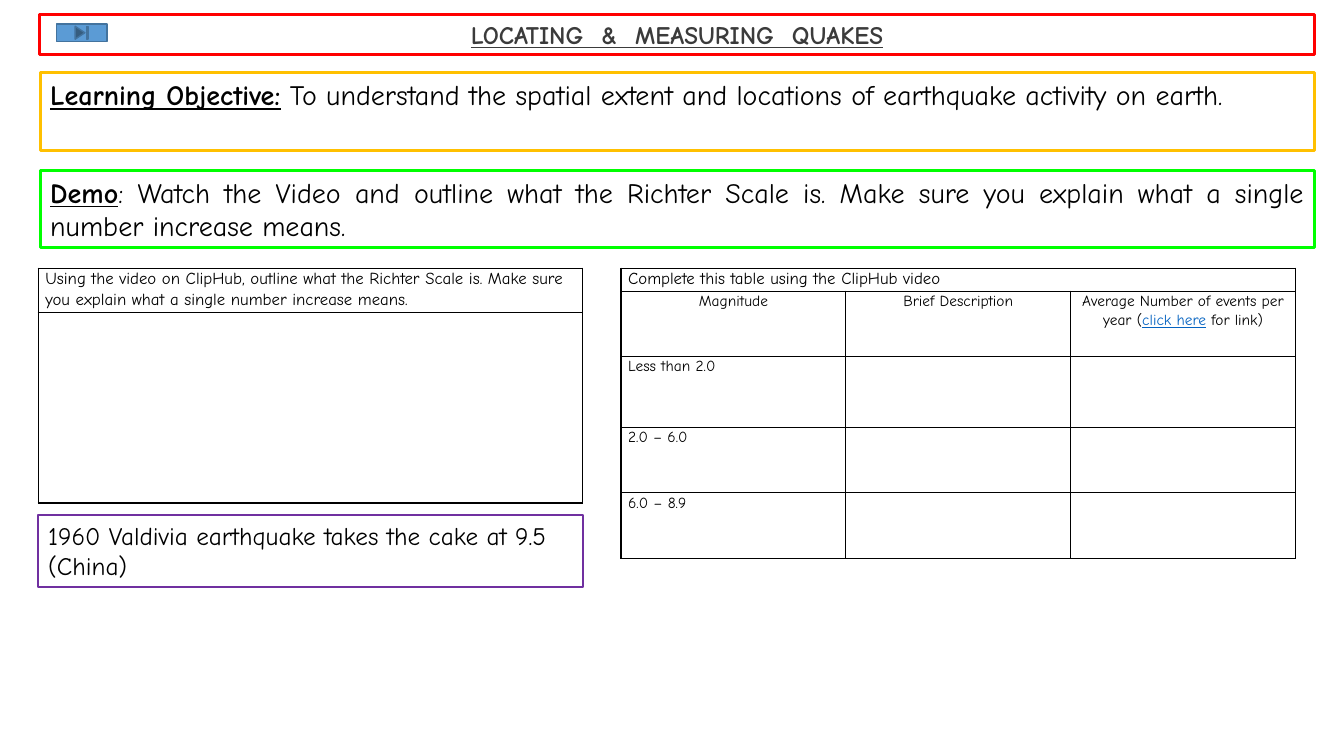
import pptx
import pptx.dml.color
import pptx.enum.shapes
import pptx.enum.text
import pptx.oxml
import pptx.oxml.ns
import pptx.util

Inches = pptx.util.Inches
Pt = pptx.util.Pt
RGBColor = pptx.dml.color.RGBColor
ALIGN = pptx.enum.text.PP_ALIGN

FONT = "Comic Neue"
BLACK = RGBColor(0x00, 0x00, 0x00)
CHARCOAL = RGBColor(0x3B, 0x3B, 0x3B)
RED = RGBColor(0xFF, 0x00, 0x00)
AMBER = RGBColor(0xFF, 0xC0, 0x00)
GREEN = RGBColor(0x00, 0xFF, 0x00)
PURPLE = RGBColor(0x70, 0x30, 0xA0)
BLUE = RGBColor(0x5B, 0x9B, 0xD5)
DARK_BLUE = RGBColor(0x43, 0x73, 0x9E)
LINK_BLUE = RGBColor(0x05, 0x63, 0xC1)

TASK = "outline what the Richter Scale is. Make sure you explain what a single number increase means."


def add_run(p, text, size, color=BLACK, bold=False, underline=False):
    r = p.add_run()
    r.text = text
    r.font.name = FONT
    r.font.size = Pt(size)
    r.font.color.rgb = color
    r.font.bold = bold
    r.font.underline = underline


def add_box(s, x, y, w, h, line, size, body="", heading="", align=ALIGN.LEFT,
            heading_color=BLACK, width=2.25):
    sp = s.shapes.add_textbox(Inches(x), Inches(y), Inches(w), Inches(h))
    sp.line.color.rgb = line
    sp.line.width = Pt(width)
    tf = sp.text_frame
    tf.word_wrap = True
    p = tf.paragraphs[0]
    p.alignment = align
    if heading:
        add_run(p, heading, size, heading_color, bold=True, underline=True)
    if body:
        add_run(p, body, size)


def add_end_button(s, x, y, w, h):
    sp = s.shapes.add_shape(pptx.enum.shapes.MSO_SHAPE.ACTION_BUTTON_END,
                            Inches(x), Inches(y), Inches(w), Inches(h))
    sp.shadow.inherit = False
    sp.fill.solid()
    sp.fill.fore_color.rgb = BLUE
    sp.line.color.rgb = DARK_BLUE
    sp.line.width = Pt(1)


def style_cell(cell):
    cell.margin_left = cell.margin_right = Inches(0.07)
    cell.margin_top = cell.margin_bottom = 0
    p = cell.text_frame.paragraphs[0]
    p.line_spacing = 1.07
    p._p.get_or_add_endParaRPr().set("sz", "1100")
    tcPr = cell._tc.get_or_add_tcPr()
    for side in ("lnL", "lnR", "lnT", "lnB"):
        tcPr.append(pptx.oxml.parse_xml(
            f'<a:{side} {pptx.oxml.ns.nsdecls("a")} w="{Pt(1)}"><a:solidFill>'
            f'<a:srgbClr val="{BLACK}"/></a:solidFill></a:{side}>'))
    cell.fill.background()


def add_grid(s, x, y, col_width, cols, heights):
    table = s.shapes.add_table(len(heights), cols, Inches(x), Inches(y),
                               Inches(col_width * cols), Inches(sum(heights))).table
    table.first_row = False
    table.horz_banding = False
    for col in table.columns:
        col.width = Inches(col_width)
    for row, height in zip(table.rows, heights):
        row.height = Inches(height)
        for cell in row.cells:
            style_cell(cell)
    return table


def fill_cell(table, row, col, text, size=11, align=ALIGN.LEFT):
    p = table.cell(row, col).text_frame.paragraphs[0]
    p.alignment = align
    add_run(p, text, size)
    return p


def add_answer_table(s):
    table = add_grid(s, 0.38, 2.66, 5.4, 1, [0.44, 1.89])
    fill_cell(table, 0, 0, f"Using the video on ClipHub, {TASK}", 12)


def add_magnitude_table(s):
    table = add_grid(s, 6.16, 2.66, 2.23, 3, [0.23, 0.65, 0.7, 0.65, 0.65])
    table.cell(0, 0).merge(table.cell(0, 2))
    fill_cell(table, 0, 0, "Complete this table using the ClipHub video", 12)
    headings = ["Magnitude", "Brief Description", "Average Number of events per year ("]
    for col, heading in enumerate(headings):
        p = fill_cell(table, 1, col, heading, align=ALIGN.CENTER)
    add_run(p, "click here", 11, LINK_BLUE, underline=True)
    add_run(p, " for link)", 11)
    for row, magnitude in enumerate(["Less than 2.0", "2.0 – 6.0", "6.0 – 8.9"], 2):
        fill_cell(table, row, 0, magnitude)


def main():
    prs = pptx.Presentation()
    prs.slide_width = Inches(13.33)
    prs.slide_height = Inches(7.5)
    s = prs.slides.add_slide(prs.slide_layouts[6])
    add_box(s, 0.4, 0.72, 12.64, 0.77, AMBER, 20,
            " To understand the spatial extent and locations of earthquake activity on earth.",
            "Learning Objective:", ALIGN.JUSTIFY)
    add_box(s, 0.39, 0.14, 12.65, 0.4, RED, 18, heading="LOCATING  &  MEASURING  QUAKES",
            align=ALIGN.CENTER, heading_color=CHARCOAL)
    add_answer_table(s)
    add_box(s, 0.4, 1.69, 12.64, 0.77, GREEN, 20, f": Watch the Video and {TASK}",
            "Demo", ALIGN.JUSTIFY)
    add_end_button(s, 0.56, 0.24, 0.5, 0.17)
    add_box(s, 0.38, 5.11, 5.4, 0.71, PURPLE, 18,
            "1960 Valdivia earthquake takes the cake at 9.5 (China)", width=1.5)
    add_magnitude_table(s)
    prs.save("out.pptx")


if __name__ == "__main__":
    main()
